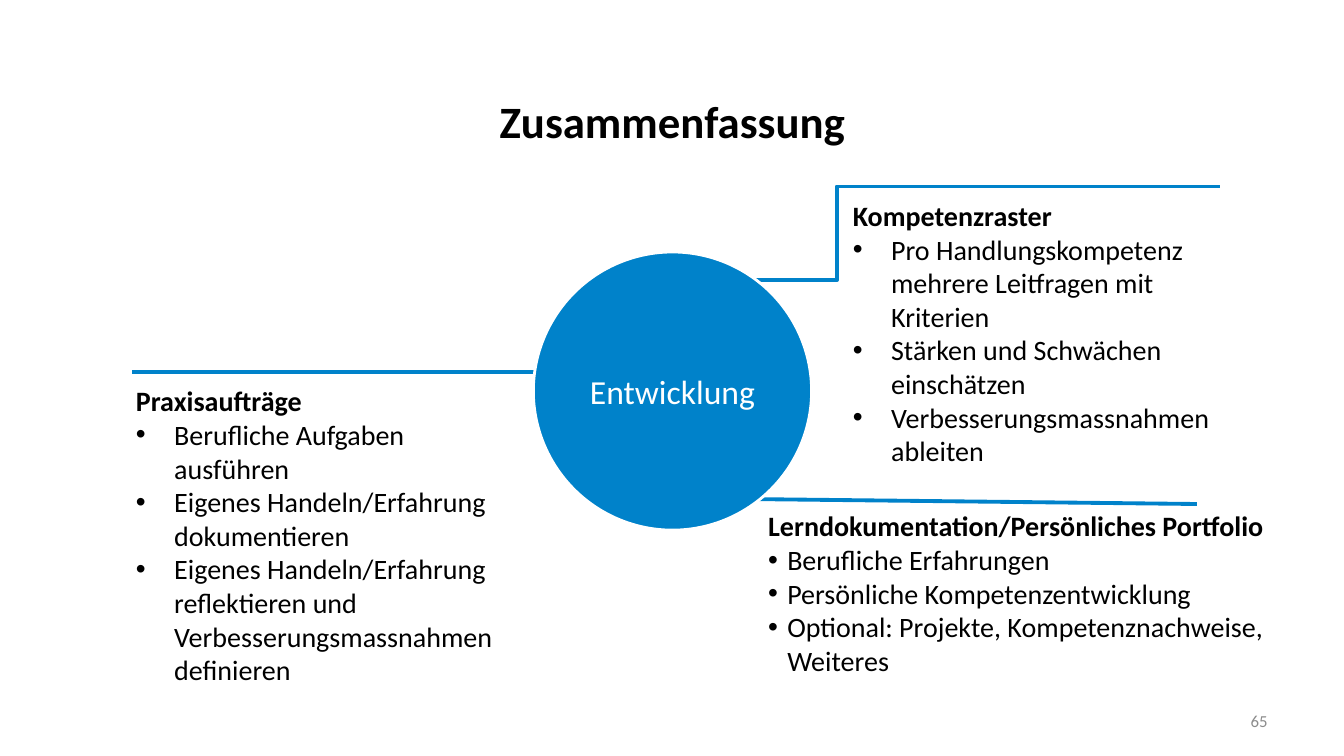
from lxml import etree
from pptx import Presentation
from pptx.dml.color import RGBColor
from pptx.enum import shapes, text
from pptx.oxml import ns
from pptx.util import Inches, Pt

BLUE = RGBColor(0x00, 0x82, 0xCA)
BLACK = RGBColor(0x00, 0x00, 0x00)
WHITE = RGBColor(0xFF, 0xFF, 0xFF)
GREY = RGBColor(0x8C, 0x8C, 0x8C)
FONT = "Calibri"

# Content: (left, top, width, height) in inches
TITLE = ("Zusammenfassung", (0.67, 0.84, 12, 0.71))
PAGE_NUMBER = ("65", (9.56, 6.95, 3.11, 0.4))
CENTRE = ("Entwicklung", (5.29, 2.5, 2.76, 2.76))

# Topics: heading, box, bullet indent, bullets
TOPICS = [
    ("Lerndokumentation/Persönliches Portfolio", (7.52, 5, 5.37, 1.75), 0.19, [
        "Berufliche Erfahrungen",
        "Persönliche Kompetenzentwicklung",
        "Optional: Projekte, Kompetenznachweise, Weiteres",
    ]),
    ("Kompetenzraster", (8.36, 1.92, 3.82, 2.54), 0.38, [
        "Pro Handlungskompetenz mehrere Leitfragen mit Kriterien",
        "Stärken und Schwächen einschätzen",
        "Verbesserungsmassnahmen ableiten",
    ]),
    ("Praxisaufträge", (1.25, 3.76, 4.06, 2.76), 0.38, [
        "Berufliche Aufgaben ausführen",
        "Eigenes Handeln/Erfahrung dokumentieren",
        "Eigenes Handeln/Erfahrung reflektieren und Verbesserungsmassnahmen definieren",
    ]),
]

# Lines: kind, from x, from y, to x, to y
STRAIGHT = shapes.MSO_CONNECTOR.STRAIGHT
ELBOW = shapes.MSO_CONNECTOR.ELBOW
LINES = [
    (STRAIGHT, 1.31, 3.69, 5.61, 3.69),
    (STRAIGHT, 7.36, 4.95, 11.87, 5),
    (ELBOW, 9.74, 1.85, 6.86, 2.78),
    (STRAIGHT, 8.74, 1.85, 12.1, 1.85),
]


def inches(values):
    return [Inches(value) for value in values]


def style(para, size, color, bold=False, align=text.PP_ALIGN.LEFT):
    para.alignment = align
    para.font.name = FONT
    para.font.size = Pt(size)
    para.font.bold = bold
    para.font.color.rgb = color


def add_box(page, area):
    frame = page.shapes.add_textbox(*inches(area)).text_frame
    frame.word_wrap = True
    return frame


def add_label(page, label, size, color, bold, align):
    words, area = label
    frame = add_box(page, area)
    frame.vertical_anchor = text.MSO_ANCHOR.MIDDLE
    frame.text = words
    style(frame.paragraphs[0], size, color, bold, align)


def add_bullet(para, indent):
    props = para._p.get_or_add_pPr()
    props.set("marL", str(Inches(indent)))
    props.set("indent", str(-Inches(indent)))
    etree.SubElement(props, ns.qn("a:buFont"), typeface="Arial")
    etree.SubElement(props, ns.qn("a:buChar"), char="•")


def add_topic(page, heading, area, indent, bullets):
    frame = add_box(page, area)
    frame.text = heading
    style(frame.paragraphs[0], 20, BLACK, bold=True)
    for bullet in bullets:
        para = frame.add_paragraph()
        para.text = bullet
        add_bullet(para, indent)
        style(para, 20, BLACK)


def add_line(page, kind, *ends):
    line = page.shapes.add_connector(kind, *inches(ends))
    line.line.color.rgb = BLUE
    line.line.width = Pt(2.75)
    etree.SubElement(line._element.spPr, ns.qn("a:effectLst"))


def add_centre(page):
    words, area = CENTRE
    circle = page.shapes.add_shape(shapes.MSO_SHAPE.OVAL, *inches(area))
    circle.shadow.inherit = False
    circle.fill.solid()
    circle.fill.fore_color.rgb = BLUE
    circle.line.color.rgb = WHITE
    circle.line.width = Pt(2)
    frame = circle.text_frame
    frame.margin_left = frame.margin_right = frame.margin_top = frame.margin_bottom = 0
    frame.vertical_anchor = text.MSO_ANCHOR.MIDDLE
    frame.text = words
    style(frame.paragraphs[0], 24, WHITE, align=text.PP_ALIGN.CENTER)


def main():
    deck = Presentation()
    deck.slide_width, deck.slide_height = inches((13.33, 7.5))
    page = deck.slides.add_slide(deck.slide_layouts[6])

    # Title and page number
    add_label(page, TITLE, 32, BLACK, True, text.PP_ALIGN.CENTER)
    add_label(page, PAGE_NUMBER, 12, GREY, False, text.PP_ALIGN.RIGHT)

    # Topics, then the lines, with the circle over the line ends
    for topic in TOPICS:
        add_topic(page, *topic)
    for line in LINES:
        add_line(page, *line)
    add_centre(page)

    deck.save("out.pptx")


if __name__ == "__main__":
    main()
